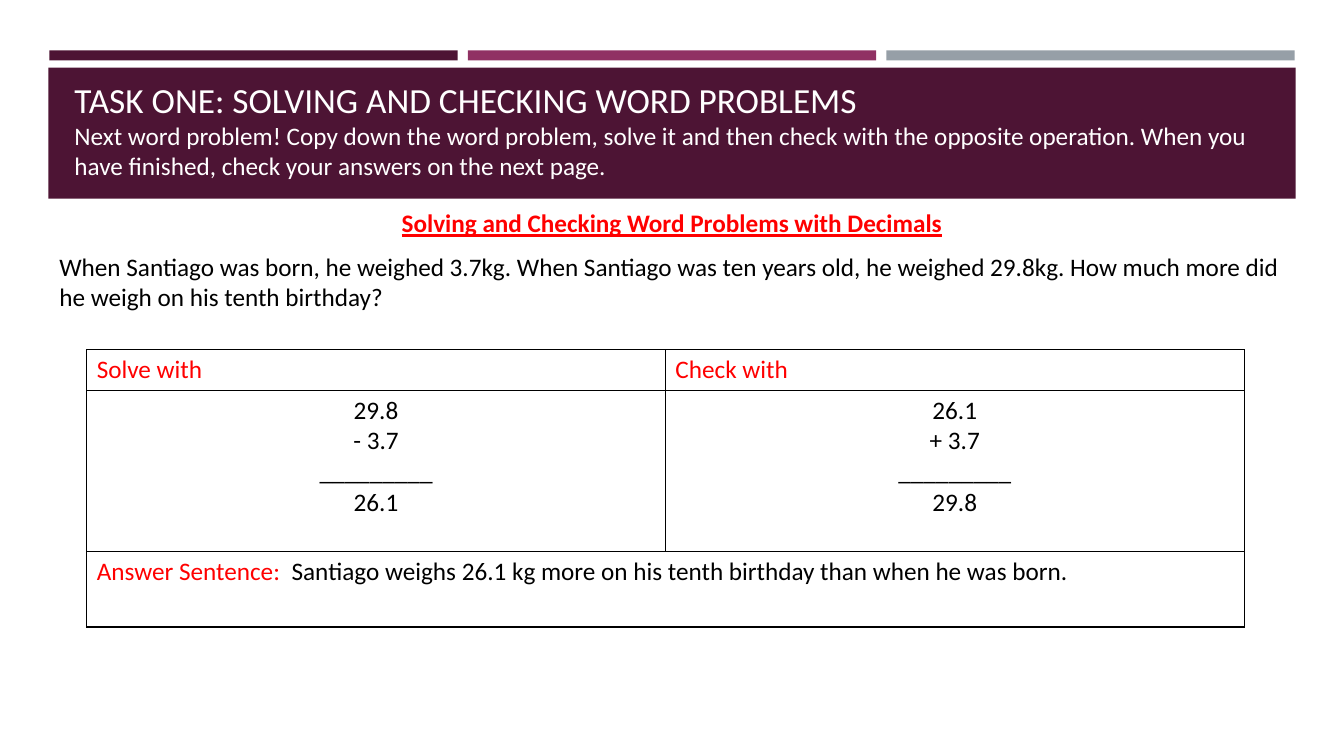
from lxml import etree
from pptx import Presentation
from pptx.dml.color import RGBColor
from pptx.enum.shapes import MSO_SHAPE
from pptx.enum.text import MSO_ANCHOR, PP_ALIGN
from pptx.oxml.ns import qn
from pptx.util import Inches, Pt

RECTANGLE = MSO_SHAPE.RECTANGLE
TOP, BOTTOM = MSO_ANCHOR.TOP, MSO_ANCHOR.BOTTOM
LEFT, CENTER = PP_ALIGN.LEFT, PP_ALIGN.CENTER

COLORS = {
    "plum": "4D1434",
    "magenta": "903163",
    "grey": "969FA7",
    "white": "FFFFFF",
    "red": "FF0000",
    "black": "000000",
}


class WorksheetPage:
    """Draws the elements of one worksheet slide in a shared style."""

    def __init__(self, deck, font="Calibri", size=18):
        self.page = deck.slides.add_slide(deck.slide_layouts[6])
        self.font = font
        self.size = size

    def bar(self, left, top, width, height, color):
        box = self.page.shapes.add_shape(
            RECTANGLE, Inches(left), Inches(top), Inches(width), Inches(height))
        box.shadow.inherit = False
        box.fill.solid()
        box.fill.fore_color.rgb = RGBColor.from_string(COLORS[color])
        box.line.fill.background()

    def fill_para(self, para, spans, align=LEFT, **spacing):
        para.alignment = align
        for name, points in spacing.items():
            setattr(para, name, Pt(points))
        for text, color, extra in spans:
            span = para.add_run()
            span.text = text
            formats = {"name": self.font, "size": Pt(self.size), **extra}
            for name, value in formats.items():
                setattr(span.font, name, value)
            span.font.color.rgb = RGBColor.from_string(COLORS[color])

    def fill_frame(self, frame, paragraphs):
        for index, options in enumerate(paragraphs):
            para = frame.add_paragraph() if index else frame.paragraphs[0]
            self.fill_para(para, **options)

    def text(self, left, top, width, height, paragraphs, anchor=TOP):
        box = self.page.shapes.add_textbox(
            Inches(left), Inches(top), Inches(width), Inches(height))
        frame = box.text_frame
        frame.word_wrap = True
        frame.vertical_anchor = anchor
        self.fill_frame(frame, paragraphs)

    def border(self, cell, width=1):
        properties = cell._tc.get_or_add_tcPr()
        for index, side in enumerate(("lnL", "lnR", "lnT", "lnB")):
            line = etree.Element(qn(f"a:{side}"), w=str(Pt(width)))
            fill = etree.SubElement(line, qn("a:solidFill"))
            etree.SubElement(fill, qn("a:srgbClr"), val=COLORS["black"])
            properties.insert(index, line)

    def table(self, left, top, widths, heights):
        frame = self.page.shapes.add_table(
            len(heights), len(widths), Inches(left), Inches(top),
            Inches(sum(widths)), Inches(sum(heights)))
        grid = frame.table
        grid.first_row = False
        grid.horz_banding = False
        for column, width in zip(grid.columns, widths):
            column.width = Inches(width)
        for row, height in zip(grid.rows, heights):
            row.height = Inches(height)
        for cell in grid.iter_cells():
            cell.fill.background()
            self.border(cell)
        return grid


def main():
    deck = Presentation()
    deck.slide_width = Inches(13.33)
    deck.slide_height = Inches(7.5)
    sheet = WorksheetPage(deck)

    for index, color in enumerate(("plum", "magenta", "grey")):
        sheet.bar(0.49 + index * 4.15, 0.5, 4.05, 0.1, color)
    sheet.bar(0.48, 0.67, 12.37, 1.3, "plum")

    title = "TASK ONE: SOLVING AND CHECKING WORD PROBLEMS"
    sheet.text(0.64, 0.7, 12.06, 0.55,
               [{"spans": [(title, "white", {"size": Pt(25.2)})]}], BOTTOM)

    heading = "Solving and Checking Word Problems with Decimals"
    problem = ("When Santiago was born, he weighed 3.7kg. When Santiago was ten "
               "years old, he weighed 29.8kg. How much more did he weigh on his "
               "tenth birthday?")
    spacing = {"space_before": 3.6, "space_after": 6}
    sheet.text(0.49, 2.01, 12.35, 5.49, [
        {"spans": [(heading, "red", {"bold": True, "underline": True})],
         "align": CENTER, **spacing},
        {"spans": [(problem, "black", {})], **spacing},
    ])

    instruction = ("Next word problem! Copy down the word problem, solve it and "
                   "then check with the opposite operation. When you have "
                   "finished, check your answers on the next page.")
    sheet.text(0.64, 1.14, 12.06, 0.71,
               [{"spans": [(instruction, "white", {})]}])

    grid = sheet.table(0.86, 3.47, [5.74, 5.74], [0.4, 1.6, 0.75])
    workings = [
        ("Solve with", ("29.8", "- 3.7", "_________", "26.1")),
        ("Check with", ("26.1", "+ 3.7", "_________", "29.8")),
    ]
    for column, (label, steps) in enumerate(workings):
        sheet.fill_frame(grid.cell(0, column).text_frame,
                         [{"spans": [(label, "red", {})]}])
        sheet.fill_frame(grid.cell(1, column).text_frame,
                         [{"spans": [(step, "black", {})], "align": CENTER}
                          for step in steps])

    answer = ("Santiago weighs 26.1 kg more on his tenth birthday than when he "
              "was born.")
    grid.cell(2, 0).merge(grid.cell(2, 1))
    sheet.fill_frame(grid.cell(2, 0).text_frame, [
        {"spans": [("Answer Sentence:  ", "red", {}), (answer, "black", {})]}])

    deck.save("out.pptx")


if __name__ == "__main__":
    main()
